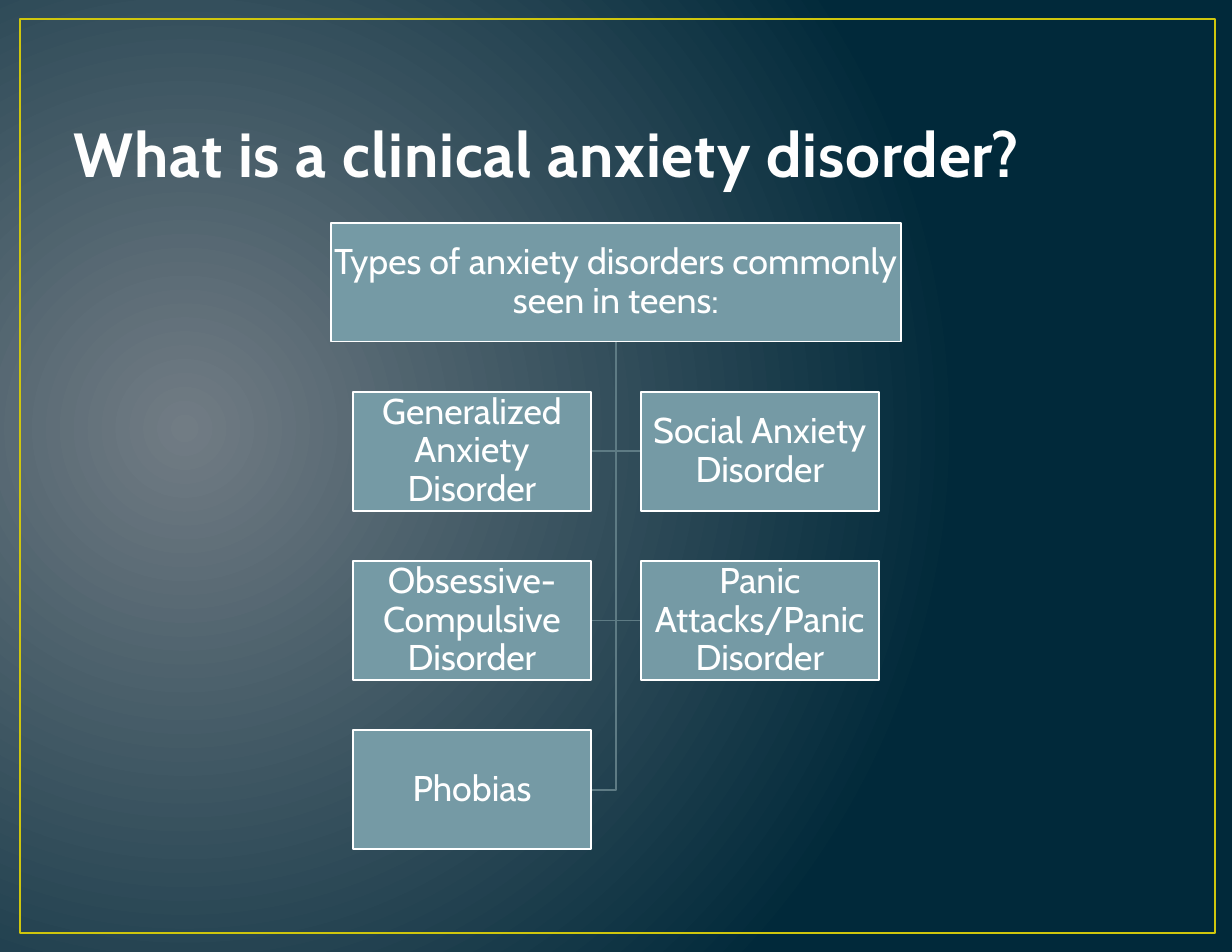
import pptx
import pptx.dml.color
import pptx.enum.shapes
import pptx.enum.text
import pptx.oxml
import pptx.oxml.ns
import pptx.util
from pptx.util import Inches, Pt

ANCHOR = pptx.enum.text.MSO_ANCHOR
NS = pptx.oxml.ns.nsdecls("a")


def color(hex_string):
    return pptx.dml.color.RGBColor.from_string(hex_string)


class Deck:
    """House style plus the slide being drawn."""

    FONT = "Cabin"
    BOX_FILL, BOX_LINE, BRANCH = "759AA5", "FFFFFF", "5E7B84"
    FRAME, TITLE, TITLE_EDGE = "CFC60D", "FEFEFE", "384F55"

    def __init__(self, slide):
        self.slide = slide

    def glow_background(self, inner, outer):
        """Radial gradient centred near the left edge."""
        fill = self.slide.background.fill
        fill.gradient()
        for stop, position, shade in zip(fill.gradient_stops, (0, 1), (inner, outer)):
            stop.position = position
            stop.color.rgb = color(shade)
        linear = self.slide.element.find(".//" + pptx.oxml.ns.qn("a:lin"))
        circle = pptx.oxml.parse_xml(
            f'<a:path {NS} path="circle">'
            '<a:fillToRect l="15000" t="50000" r="85000" b="60000"/></a:path>')
        linear.getparent().replace(linear, circle)

    def rectangle(self, left, top, width, height, line, weight, fill=None):
        shape = self.slide.shapes.add_shape(
            pptx.enum.shapes.MSO_SHAPE.RECTANGLE,
            Inches(left), Inches(top), Inches(width), Inches(height))
        shape.shadow.inherit = False
        if fill:
            shape.fill.solid()
            shape.fill.fore_color.rgb = color(fill)
        else:
            shape.fill.background()
        shape.line.color.rgb = color(line)
        shape.line.width = Pt(weight)
        return shape

    def text(self, shape, words, size, shade, anchor, margins):
        frame = shape.text_frame
        frame.text = words
        frame.word_wrap = True
        frame.auto_size = pptx.enum.text.MSO_AUTO_SIZE.NONE
        frame.vertical_anchor = anchor
        frame.margin_left = frame.margin_right = Inches(margins[0])
        frame.margin_top = frame.margin_bottom = Inches(margins[1])
        paragraph = frame.paragraphs[0]
        paragraph.font.name = self.FONT
        paragraph.font.size = Pt(size)
        paragraph.font.color.rgb = color(shade)
        return paragraph

    def title(self, words, left, top, width, height):
        title = self.slide.shapes.title
        title.left, title.top = Inches(left), Inches(top)
        title.width, title.height = Inches(width), Inches(height)
        paragraph = self.text(title, words, 40, self.TITLE, ANCHOR.BOTTOM, (0.11, 0.06))
        paragraph.alignment = pptx.enum.text.PP_ALIGN.LEFT
        paragraph.font.bold = True
        properties = paragraph.runs[0].font._element
        properties.set("spc", "60")
        properties.insert(0, pptx.oxml.parse_xml(
            f'<a:ln {NS} w="{Pt(1.05)}"><a:solidFill>'
            f'<a:srgbClr val="{self.TITLE_EDGE}"/></a:solidFill></a:ln>'))

    def box(self, words, left, top, width, height):
        shape = self.rectangle(left, top, width, height, self.BOX_LINE, 1.25, self.BOX_FILL)
        paragraph = self.text(shape, words, 23, "FFFFFF", ANCHOR.MIDDLE, (0.02, 0.02))
        paragraph.alignment = pptx.enum.text.PP_ALIGN.CENTER
        paragraph.line_spacing = 0.9

    def branch(self, trunk, top, side, level):
        """Line down the trunk, then across to the side of a box."""
        builder = self.slide.shapes.build_freeform(Inches(trunk), Inches(top))
        builder.add_line_segments(
            [(Inches(trunk), Inches(level)), (Inches(side), Inches(level))], close=False)
        line = builder.convert_to_shape()
        line.shadow.inherit = False
        line.fill.background()
        line.line.color.rgb = color(self.BRANCH)
        line.line.width = Pt(1.25)


def main():
    presentation = pptx.Presentation()
    presentation.slide_width, presentation.slide_height = Inches(11), Inches(8.5)
    deck = Deck(presentation.slides.add_slide(presentation.slide_layouts[5]))

    deck.glow_background("717C84", "01293A")
    deck.rectangle(0.18, 0.17, 10.67, 8.16, deck.FRAME, 1.5)
    deck.title("What is a clinical anxiety disorder?", 0.55, 0.34, 9.9, 1.42)

    trunk, root_top, root_width = 5.5, 1.99, 5.09
    width, height, gap = 2.13, 1.06, 0.45
    arm = 0.22
    disorders = ["Generalized Anxiety Disorder", "Social Anxiety Disorder",
                 "Obsessive-Compulsive Disorder", "Panic Attacks/Panic Disorder",
                 "Phobias"]
    places = []
    for index, disorder in enumerate(disorders):
        row, column = divmod(index, 2)
        left = trunk + arm if column else trunk - arm - width
        places.append((disorder, left, root_top + (row + 1) * (height + gap)))

    for _, left, top in places:
        side = left if left > trunk else left + width
        deck.branch(trunk, root_top + height, side, top + height / 2)
    deck.box("Types of anxiety disorders commonly seen in teens:",
             trunk - root_width / 2, root_top, root_width, height)
    for disorder, left, top in places:
        deck.box(disorder, left, top, width, height)

    presentation.save("out.pptx")


if __name__ == "__main__":
    main()
